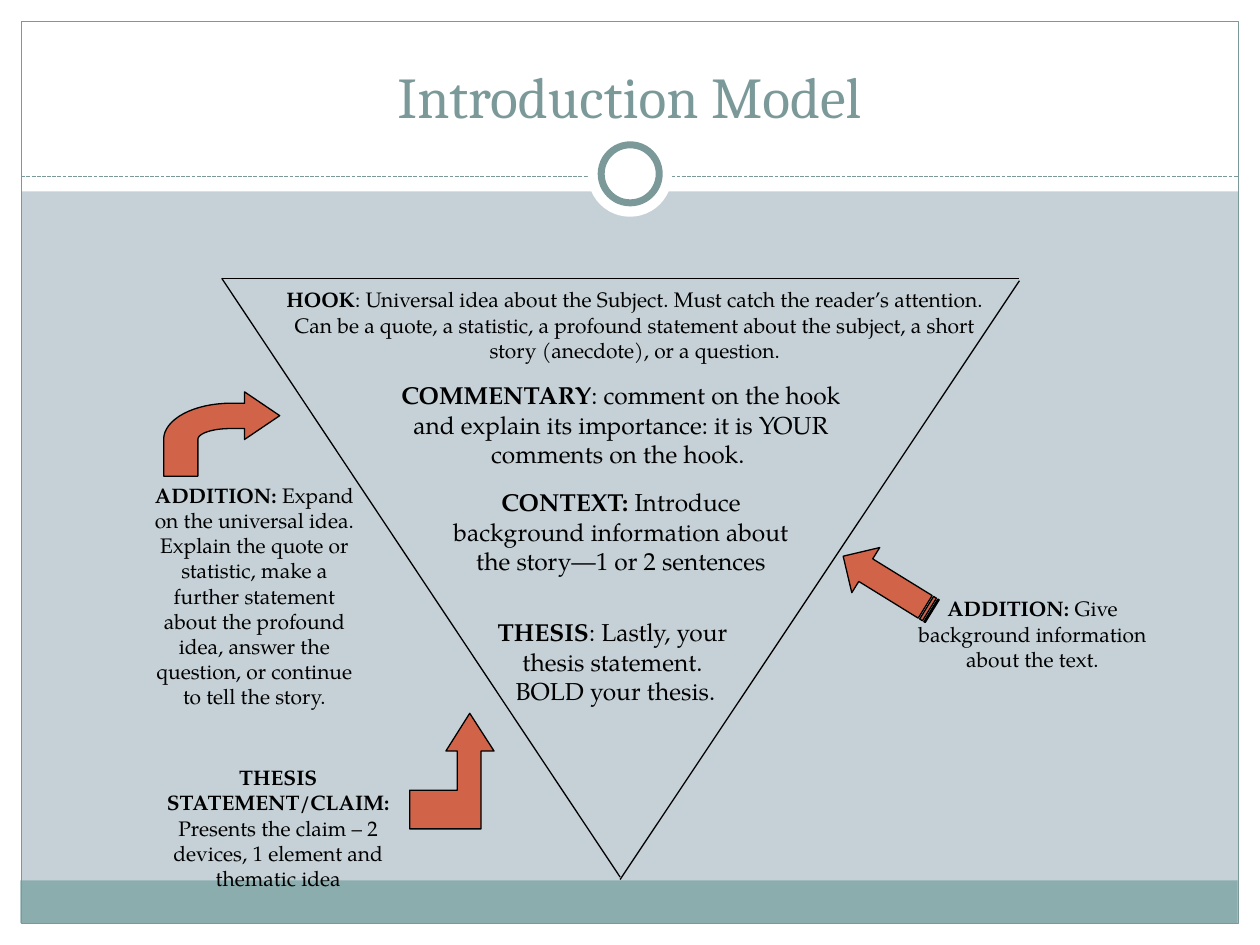
"""Build the Introduction Model slide: an inverted triangle of essay parts with side notes."""
from math import cos, pi, sin

from lxml.etree import SubElement
from pptx import Presentation
from pptx.dml.color import RGBColor
from pptx.enum.dml import MSO_LINE
from pptx.enum.shapes import MSO_CONNECTOR, MSO_SHAPE
from pptx.enum.text import MSO_ANCHOR, MSO_AUTO_SIZE, PP_ALIGN
from pptx.oxml.ns import qn
from pptx.util import Cm, Pt

COLORS = {name: RGBColor.from_string(value) for name, value in {
    "background": "C5D1D7", "white": "FFFFFF", "band": "8CADAE",
    "accent": "7C999A", "arrow": "D16349", "black": "000000",
}.items()}
TITLE_FONT = {"name": "Cambria", "size": Pt(33), "bold": False}
BODY_FONT = {"name": "TeX Gyre Pagella"}
BOX_FORMAT = {"word_wrap": True, "auto_size": MSO_AUTO_SIZE.SHAPE_TO_FIT_TEXT}
TITLE_FORMAT = {"word_wrap": True, "auto_size": MSO_AUTO_SIZE.NONE,
                "vertical_anchor": MSO_ANCHOR.BOTTOM}


def paint(shape, fill=None, line=None, width=0.75):
    """Give a shape its fill and outline, without a shadow."""
    shape.shadow.inherit = False
    for part, color in ((shape.fill, fill), (shape.line.fill, line)):
        if color:
            part.solid()
            part.fore_color.rgb = COLORS[color]
        else:
            part.background()
    if line:
        shape.line.width = Pt(width)


def add_line(start, end, color, dash=None):
    """Draw a straight line between two points in centimetres."""
    connector = slide.shapes.add_connector(
        MSO_CONNECTOR.STRAIGHT, *map(Cm, start + end))
    connector.line.color.rgb = COLORS[color]
    connector.line.width = Pt(0.75)
    if dash:
        connector.line.dash_style = dash
    SubElement(connector.element.spPr, qn("a:effectLst"))


presentation = Presentation()
presentation.slide_width, presentation.slide_height = Cm(25.4), Cm(19.05)
slide = presentation.slides.add_slide(presentation.slide_layouts[5])
slide.background.fill.solid()
slide.background.fill.fore_color.rgb = COLORS["background"]

for box, fill, line in (
    ((0, 18.62, 25.4, 0.43), "white", None),
    ((0, 0, 25.4, 3.86), "white", None),
    ((0, 0, 0.43, 19.05), "white", None),
    ((24.97, 0, 0.43, 19.05), "white", None),
    ((0.41, 17.75, 24.54, 0.86), "band", None),
    ((0.43, 0.43, 24.54, 18.19), None, "accent"),
):
    paint(slide.shapes.add_shape(MSO_SHAPE.RECTANGLE, *map(Cm, box)), fill, line)

add_line((0.43, 3.56), (24.97, 3.56), "accent", MSO_LINE.SQUARE_DOT)
for box, line in (((11.85, 2.67, 1.7, 1.7), None),
                  ((12.12, 2.92, 1.17, 1.17), "accent")):
    paint(slide.shapes.add_shape(MSO_SHAPE.OVAL, *map(Cm, box)), "white", line, 4)

title = slide.shapes.title
slide.shapes.element.append(title.element)
title.left, title.top, title.width, title.height = map(Cm, (0.84, 0.64, 23.7, 2.11))
title.text_frame.text = "Introduction Model"
for key, value in TITLE_FORMAT.items():
    setattr(title.text_frame, key, value)
paragraph = title.text_frame.paragraphs[0]
paragraph.alignment = PP_ALIGN.CENTER
title_font = paragraph.runs[0].font
for key, value in TITLE_FONT.items():
    setattr(title_font, key, value)
title_font.color.rgb = COLORS["accent"]

for start, end in (((4.47, 5.61), (12.5, 17.68)),
                   ((20.55, 5.66), (12.5, 17.73)),
                   ((4.47, 5.61), (20.55, 5.61))):
    add_line(start, end, "black")

angles = [pi / 2 * (1 + step / 16) for step in range(17)]
outer_bend, inner_bend = (
    [(4.65 + across * cos(angle), 8.86 - up * sin(angle)) for angle in angles]
    for across, up in ((1.35, 0.73), (0.66, 0.22)))
curved_arrow = [(5.64, 8.38), (4.93, 7.9), (4.93, 8.13), *outer_bend,
                (3.3, 9.6), (3.99, 9.6), *reversed(inner_bend),
                (4.93, 8.64), (4.93, 8.86)]
bent_arrow = [(9.47, 14.38), (8.99, 15.14), (9.22, 15.14), (9.22, 15.93),
              (8.26, 15.93), (8.26, 16.71), (9.7, 16.71), (9.7, 15.14), (9.96, 15.14)]
for outline in (curved_arrow, bent_arrow):
    points = [(Cm(x), Cm(y)) for x, y in outline]
    builder = slide.shapes.build_freeform(*points[0])
    builder.add_line_segments(points[1:], close=True)
    paint(builder.convert_to_shape(), "arrow", "black")

striped_arrow = slide.shapes.add_shape(
    MSO_SHAPE.STRIPED_RIGHT_ARROW, *map(Cm, (16.84, 11.23, 2.11, 1.07)))
striped_arrow.rotation = 211.7
paint(striped_arrow, "arrow", "black")

for box, size, heading, body in (
    ((5.28, 5.66, 15.04, 1.78), 12, "HOOK",
     ": Universal idea about the Subject. Must catch the reader’s attention. Can be a quote, "
     "a statistic, a profound statement about the subject, a short story (anecdote), "
     "or a question."),
    ((2.69, 9.6, 4.88, 4.83), 12, "ADDITION: ",
     "Expand on the universal idea. Explain the quote or statistic, make a further statement "
     "about the profound idea, answer the question, or continue to tell the story."),
    ((18.06, 11.89, 5.51, 1.78), 12, "ADDITION: ",
     "Give background information about the text."),
    ((7.54, 7.54, 9.96, 2.06), 14, "COMMENTARY",
     ": comment on the hook and explain its importance: it is YOUR comments on the hook. "),
    ((8.81, 9.7, 7.42, 2.06), 14, "CONTEXT: ",
     "Introduce background information about the story—1 or 2 sentences"),
    ((8.28, 12.32, 8.26, 2.06), 14, "THESIS",
     ": Lastly, your \nthesis statement. \nBOLD your thesis."),
    ((2.97, 15.29, 5.28, 2.82), 12, "THESIS STATEMENT/CLAIM: ",
     "Presents the claim – 2 devices, 1 element and thematic idea"),
):
    text_frame = slide.shapes.add_textbox(*map(Cm, box)).text_frame
    for key, value in BOX_FORMAT.items():
        setattr(text_frame, key, value)
    for index, text in enumerate(body.split("\n")):
        paragraph = text_frame.add_paragraph() if index else text_frame.paragraphs[0]
        paragraph.alignment = PP_ALIGN.CENTER
        parts = [(text, False)] if index else [(heading, True), (text, False)]
        for words, bold in parts:
            run = paragraph.add_run()
            run.text = words
            for key, value in {**BODY_FONT, "size": Pt(size), "bold": bold}.items():
                setattr(run.font, key, value)
            run.font.color.rgb = COLORS["black"]

presentation.save("out.pptx")
